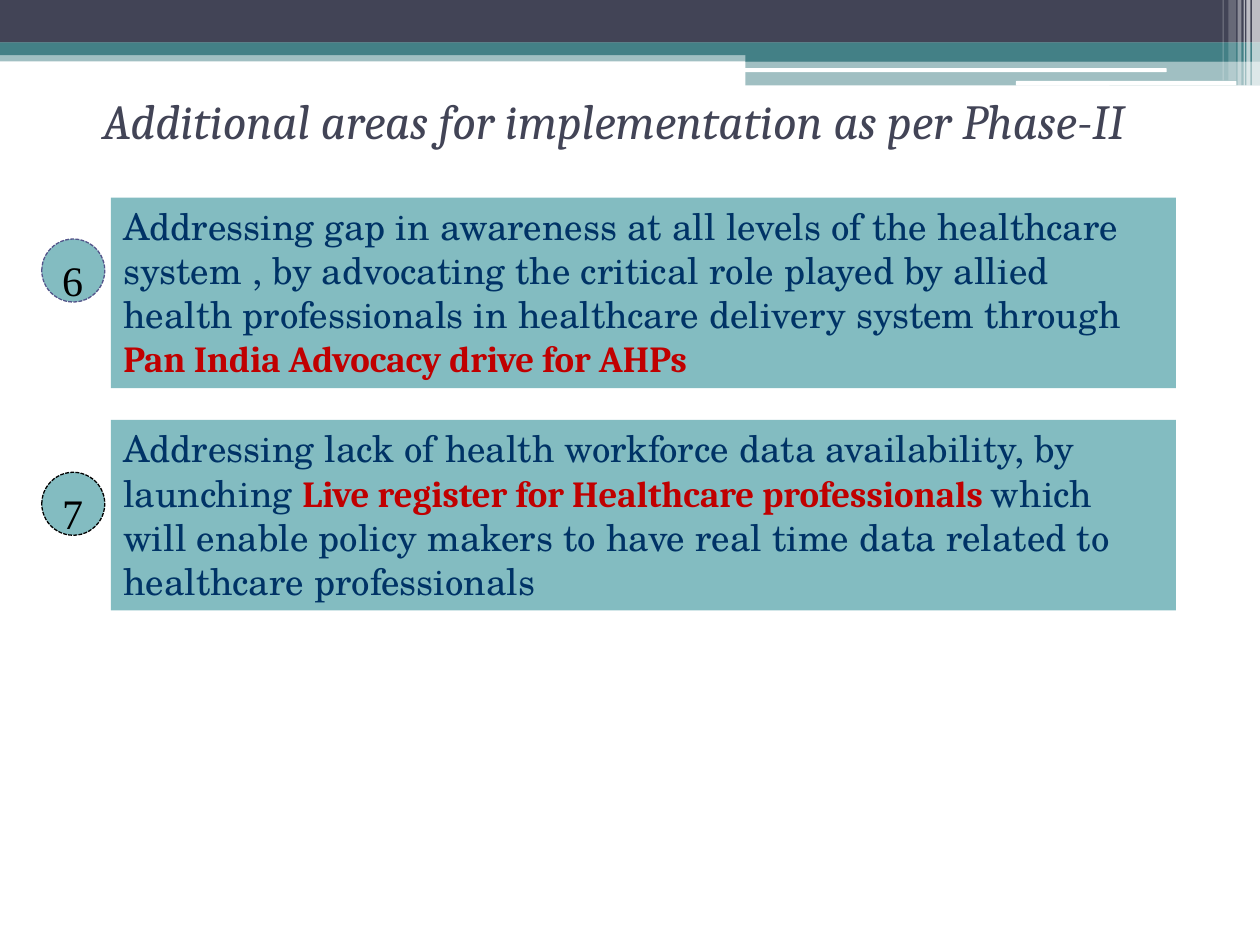
import pptx
import pptx.dml.color
import pptx.enum.dml
import pptx.enum.shapes
import pptx.enum.text
import pptx.oxml
import pptx.oxml.ns
import pptx.util

Pt = pptx.util.Pt
SHAPES = pptx.enum.shapes.MSO_SHAPE
ALIGN = pptx.enum.text.PP_ALIGN
ANCHOR = pptx.enum.text.MSO_ANCHOR
AUTOSIZE = pptx.enum.text.MSO_AUTO_SIZE

COLOURS = {
    "slate": "424456", "teal": "438086", "white": "FFFFFF", "panel": "83BCC1",
    "navy": "003366", "red": "C00000", "violet": "53548A", "black": "000000",
}
BODY = {"name": "TeX Gyre Schola", "size": Pt(21), "bold": False}
KEY = {"name": "Cambria", "size": Pt(21), "bold": True}
DIGIT = {"name": "Times New Roman", "size": Pt(24)}
HEADING = {"name": "Cambria", "size": Pt(28), "italic": True}

# left, top, width, height, colour, opacity in percent
BANDS = [
    (0, 28.8, 720, 6.3, "teal", 50),
    (0, 0, 720, 24.4, "slate", 100),
    (0, 24.3, 720, 7.2, "teal", 100),
    (426, 28, 294, 7.2, "teal", 100),
    (426, 34.9, 294, 14, "teal", 50),
]
PILLS = [(425.5, 39, 241.2, 2.2), (580.5, 46.3, 126, 2.6)]
# left, width, height, opacity in percent
STRIPES = [
    (715.5, 4.5, 49, 65), (712.3, 2.2, 49, 65), (710.7, 0.7, 49, 60),
    (707.2, 2.2, 49, 40), (702, 4.3, 46, 20), (698.6, 0.7, 46, 30),
]
# number, panel top, badge top, badge outline, runs
AREAS = [
    ("6", 113, 136.6, "violet", [
        ("Addressing gap in awareness at all levels of the healthcare system , "
         "by advocating the critical role played by allied health professionals "
         "in healthcare delivery system through ", BODY, "navy"),
        ("Pan India Advocacy drive for AHPs", KEY, "red")]),
    ("7", 240, 269.9, "black", [
        ("Addressing lack of health workforce data availability, by launching ",
         BODY, "navy"),
        ("Live register for Healthcare professionals ", KEY, "red"),
        ("which will enable policy makers to have real time data related to "
         "healthcare professionals", BODY, "navy")]),
]


def rgb(colour):
    return pptx.dml.color.RGBColor.from_string(COLOURS[colour])


def add_block(slide, kind, left, top, width, height, colour, opacity=100):
    """Add a filled preset shape without outline or shadow."""
    block = slide.shapes.add_shape(kind, Pt(left), Pt(top), Pt(width), Pt(height))
    block.shadow.inherit = False
    block.line.fill.background()
    block.fill.solid()
    block.fill.fore_color.rgb = rgb(colour)
    if opacity < 100:
        solid = block.fill.fore_color._xFill
        alpha = pptx.oxml.parse_xml(
            f'<a:alpha {pptx.oxml.ns.nsdecls("a")} val="{opacity * 1000}"/>')
        solid[0].append(alpha)
    return block


def write_runs(shape, runs, align, anchor, wrap=True):
    frame = shape.text_frame
    frame.auto_size = AUTOSIZE.NONE
    frame.word_wrap = wrap
    frame.vertical_anchor = anchor
    paragraph = frame.paragraphs[0]
    paragraph.alignment = align
    for text, style, colour in runs:
        run = paragraph.add_run()
        run.text = text
        for attribute, value in style.items():
            setattr(run.font, attribute, value)
        run.font.color.rgb = rgb(colour)


def add_header(slide):
    for left, top, width, height, colour, opacity in BANDS:
        add_block(slide, SHAPES.RECTANGLE, left, top, width, height, colour, opacity)
    for left, top, width, height in PILLS:
        add_block(slide, SHAPES.ROUNDED_RECTANGLE, left, top, width, height, "white")
    for left, width, height, opacity in STRIPES:
        add_block(slide, SHAPES.RECTANGLE, left, 0, width, height, "white", opacity)


def add_title(slide, text):
    title = slide.shapes.title
    box = {"left": -0.7, "top": 53.3, "width": 702.7, "height": 30.2}
    for attribute, value in box.items():
        setattr(title, attribute, Pt(value))
    write_runs(title, [(text, HEADING, "slate")], ALIGN.CENTER, ANCHOR.MIDDLE)


def add_panel(slide, top, runs):
    panel = add_block(slide, SHAPES.RECTANGLE, 63.4, top, 608.6, 108.8, "panel")
    write_runs(panel, runs, ALIGN.LEFT, ANCHOR.TOP)


def add_badge(slide, number, top, outline):
    badge = add_block(slide, SHAPES.OVAL, 23.9, top, 36, 36, "panel")
    badge.line.color.rgb = rgb(outline)
    badge.line.width = Pt(0.75)
    badge.line.dash_style = pptx.enum.dml.MSO_LINE.SQUARE_DOT
    write_runs(badge, [(number, DIGIT, "black")], ALIGN.RIGHT, ANCHOR.TOP, wrap=False)


def main():
    deck = pptx.Presentation()
    deck.slide_width, deck.slide_height = Pt(720), Pt(540)
    slide = deck.slides.add_slide(deck.slide_layouts.get_by_name("Title Only"))
    add_header(slide)
    add_title(slide, "Additional areas for implementation as per Phase-II")
    for number, panel_top, badge_top, outline, runs in AREAS:
        add_panel(slide, panel_top, runs)
        add_badge(slide, number, badge_top, outline)
    deck.save("out.pptx")


if __name__ == "__main__":
    main()
